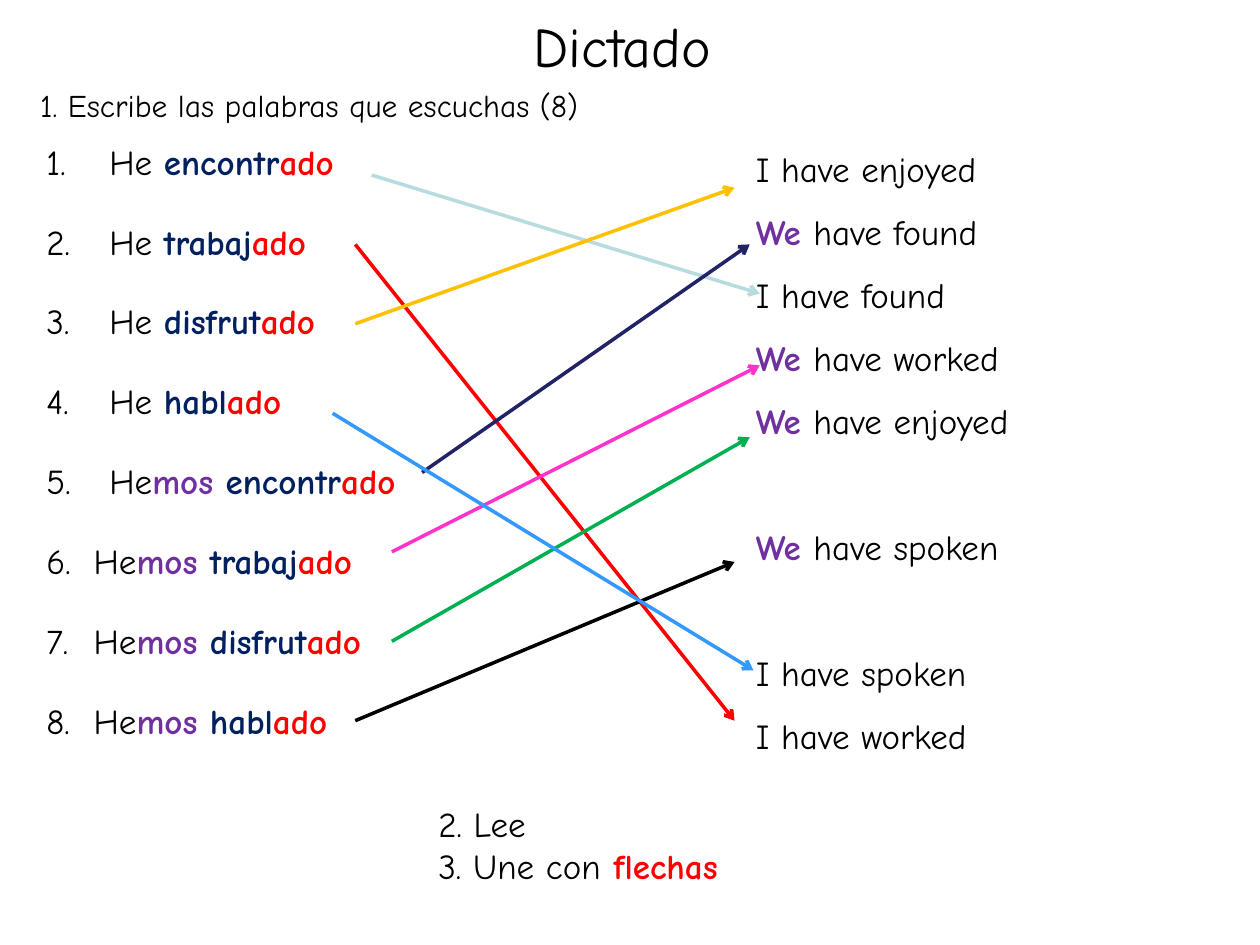
"""Build a dictation slide that pairs Spanish verbs with English ones by arrows."""
import pptx
import pptx.dml.color
import pptx.enum.shapes
import pptx.oxml
import pptx.oxml.ns
import pptx.util

INK = {
    "black": "000000", "navy": "002060", "red": "FF0000", "plum": "7030A0",
    "mist": "B6DCDF", "gold": "FFC000", "green": "00B050", "pink": "FF33CC",
    "dusk": "222267", "sky": "3399FF",
}
COLS, ROWS = 100, 75


def plain(text):
    return text, "black", False


def bold(text, ink):
    return text, ink, True


class Page:
    def __init__(self, deck, font="Comic Neue", size=20):
        self.slide = deck.slides.add_slide(deck.slide_layouts[6])
        self.font, self.size = font, size
        self.col, self.row = deck.slide_width / COLS, deck.slide_height / ROWS

    def spot(self, x, y):
        return round(x * self.col), round(y * self.row)

    def box(self, x, y, wide, high, wrap=True):
        shape = self.slide.shapes.add_textbox(*self.spot(x, y), *self.spot(wide, high))
        shape.text_frame.word_wrap = wrap
        return shape.text_frame

    def para(self, frame, runs, size=None, above=0, below=0, lead=1.0):
        first = frame.paragraphs[0]
        para = first if not first.runs else frame.add_paragraph()
        para.space_before = pptx.util.Pt(above)
        para.space_after = pptx.util.Pt(below)
        para.line_spacing = lead
        for text, ink, heavy in runs:
            run = para.add_run()
            run.text = text
            run.font.name, run.font.bold = self.font, heavy
            run.font.size = pptx.util.Pt(size or self.size)
            run.font.color.rgb = pptx.dml.color.RGBColor.from_string(INK[ink])
        return para

    def hang(self, para, left, back, auto):
        props = para._p.get_or_add_pPr()
        props.set("marL", str(round(left * self.col)))
        props.set("indent", str(round(-back * self.col)))
        if auto:
            font = pptx.oxml.parse_xml(
                f'<a:buFont {pptx.oxml.ns.nsdecls("a")} typeface="+mj-lt"/>')
            mark = pptx.oxml.parse_xml(
                f'<a:buAutoNum {pptx.oxml.ns.nsdecls("a")} type="arabicPeriod"/>')
            props.extend([font, mark])

    def arrow(self, start, end, ink):
        line = self.slide.shapes.add_connector(
            pptx.enum.shapes.MSO_CONNECTOR.STRAIGHT, *self.spot(*start), *self.spot(*end))
        line.line.color.rgb = pptx.dml.color.RGBColor.from_string(INK[ink])
        line.line.width = pptx.util.Pt(2)
        names = pptx.oxml.ns.nsdecls("a")
        line.line._get_or_add_ln().append(
            pptx.oxml.parse_xml(f'<a:tailEnd {names} type="arrow"/>'))
        line._element.spPr.append(pptx.oxml.parse_xml(f"<a:effectLst {names}/>"))


def verbs(page):
    frame = page.box(1.7, 10.4, 50.3, 55.6)
    stems = ["encontr", "trabaj", "disfrut", "habl"]
    for num in range(1, 9):
        auto = num < 6
        start = "He" if auto else f"{num}.\tHe"
        head = [plain(start + " ")] if num < 5 else [plain(start), bold("mos ", "plum")]
        stem = stems[(num - 1) % 4]
        para = page.para(frame, head + [bold(stem, "navy"), bold("ado", "red")],
                         above=12, below=8, lead=1.07)
        page.hang(para, 6 if auto else 4.75, 5 if auto else 3.75, auto)


def senses(page):
    frame = page.box(59, 11.2, 41.7, 49.8)
    for who, verb, gap in [
        ("I", "enjoyed", 0), ("We", "found", 0), ("I", "found", 0),
        ("We", "worked", 0), ("We", "enjoyed", 0), ("We", "spoken", 36),
        ("I", "spoken", 36), ("I", "worked", 0),
    ]:
        rest = f"have {verb}"
        runs = [bold("We ", "plum"), plain(rest)] if who == "We" else [plain(f"I {rest}")]
        page.para(frame, runs, above=gap, below=12)


def main():
    deck = pptx.Presentation()
    deck.slide_width, deck.slide_height = pptx.util.Inches(10), pptx.util.Inches(7.5)
    page = Page(deck)

    title = page.para(page.box(39.7, -0.1, 19.8, 7.1, wrap=False), [plain(" "), plain("Dictado")], 32)
    title.runs[0].font.size = pptx.util.Pt(36)
    verbs(page)
    senses(page)
    page.para(page.box(2.2, 6.3, 48.2, 4, wrap=False),
              [plain("1. Escribe las palabras que escuchas (8)")], 18)

    tasks = page.box(33.8, 63.2, 33.2, 7.7)
    page.para(tasks, [plain("2. Lee")])
    page.para(tasks, [plain("3. Une con"), bold(" flechas", "red")])

    for start, end, ink in [
        ((29.5, 13.9), (60.3, 23.3), "mist"),
        ((28.2, 19.4), (58.3, 57.2), "red"),
        ((28.2, 25.7), (58.3, 14.9), "gold"),
        ((31.1, 50.9), (59.5, 34.7), "green"),
        ((31.1, 43.8), (60.3, 29), "pink"),
        ((33.5, 37.5), (59.5, 19.4), "dusk"),
        ((28.2, 57.2), (58.3, 44.6), "black"),
        ((26.4, 32.8), (59.8, 53.2), "sky"),
    ]:
        page.arrow(start, end, ink)
    deck.save("out.pptx")


if __name__ == "__main__":
    main()
